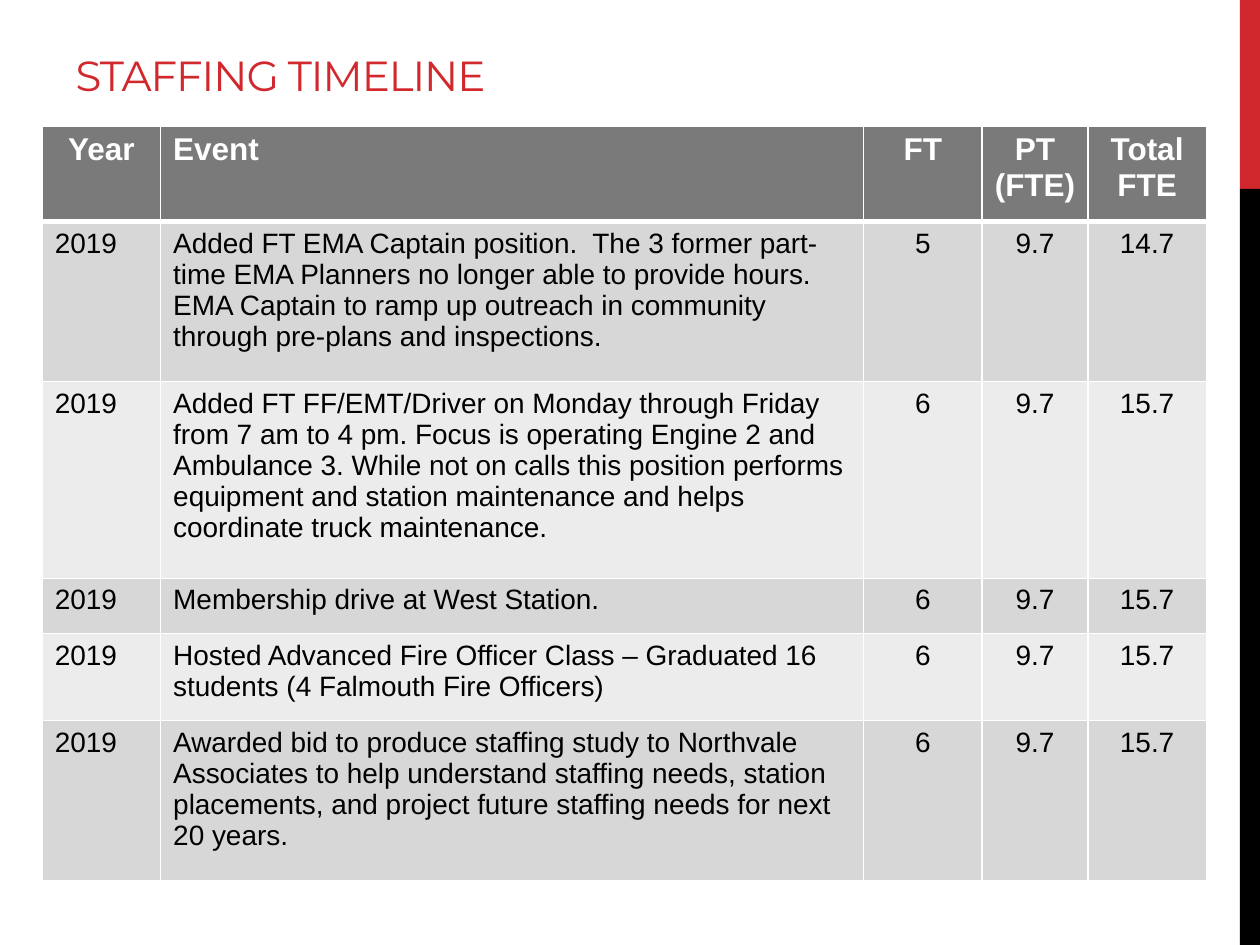
from lxml import etree
from pptx import Presentation, util as u
from pptx.dml import color
from pptx.enum import shapes, text
from pptx.oxml import ns

GRID_COLUMNS, GRID_ROWS = 100, 75
COLUMN_WIDTHS = [9.4, 55.8, 9.4, 8.4, 9.4]
ROW_HEIGHTS = [7.6, 12.7, 15.6, 4.4, 6.9, 12.7]
HEADINGS = ["Year", "Event", "FT", "PT (FTE)", "Total FTE"]
TIMELINE = [
    ["2019", "Added FT EMA Captain position.  The 3 former part-time EMA Planners "
     "no longer able to provide hours.  EMA Captain to ramp up outreach in community "
     "through pre-plans and inspections.", "5", "9.7", "14.7"],
    ["2019", "Added FT FF/EMT/Driver on Monday through Friday from 7 am to 4 pm. "
     "Focus is operating Engine 2 and Ambulance 3. While not on calls this position "
     "performs equipment and station maintenance and helps coordinate truck "
     "maintenance.", "6", "9.7", "15.7"],
    ["2019", "Membership drive at West Station.", "6", "9.7", "15.7"],
    ["2019", "Hosted Advanced Fire Officer Class – Graduated 16 students "
     "(4 Falmouth Fire Officers)", "6", "9.7", "15.7"],
    ["2019", "Awarded bid to produce staffing study to Northvale Associates to help "
     "understand staffing needs, station placements, and project future staffing "
     "needs for next 20 years.", "6", "9.7", "15.7"],
]


def rgb(value):
    return color.RGBColor.from_string(value)


class SlideBuilder:
    red, black, white = "D1282E", "000000", "FFFFFF"
    header_fill, bands = "7A7A7A", ("D7D7D7", "ECECEC")
    title_font, body_font = "Montserrat", "Arial"

    def __init__(self, deck):
        self.column = deck.slide_width / GRID_COLUMNS
        self.row = deck.slide_height / GRID_ROWS
        self.slide = deck.slides.add_slide(deck.slide_layouts[5])

    def frame(self, left, top, width, height):
        return (u.Emu(round(left * self.column)), u.Emu(round(top * self.row)),
                u.Emu(round(width * self.column)), u.Emu(round(height * self.row)))

    def style(self, paragraph, font, size, fill, bold=False):
        paragraph.font.name = font
        paragraph.font.size = u.Pt(size)
        paragraph.font.bold = bold
        paragraph.font.color.rgb = rgb(fill)

    def title(self, words, *place):
        box = self.slide.shapes.title
        box.left, box.top, box.width, box.height = self.frame(*place)
        box.text_frame.text = words
        box.text_frame.word_wrap = True
        box.text_frame.auto_size = text.MSO_AUTO_SIZE.NONE
        box.text_frame.vertical_anchor = text.MSO_ANCHOR.BOTTOM
        para = box.text_frame.paragraphs[0]
        para.alignment = text.PP_ALIGN.LEFT
        self.style(para, self.title_font, 24, self.red)
        para.runs[0].font._element.set("spc", "-60")

    def bar(self, fill, *place):
        box = self.slide.shapes.add_shape(shapes.MSO_SHAPE.RECTANGLE, *self.frame(*place))
        box.shadow.inherit = False
        box.fill.solid()
        box.fill.fore_color.rgb = rgb(fill)
        box.line.fill.background()

    def borders(self, cell, bottom):
        properties = cell._tc.get_or_add_tcPr()
        for side, points in (("L", 1), ("R", 1), ("T", 1), ("B", bottom)):
            line = etree.SubElement(properties, ns.qn(f"a:ln{side}"), w=str(u.Pt(points)))
            fill = etree.SubElement(line, ns.qn("a:solidFill"))
            etree.SubElement(fill, ns.qn("a:srgbClr"), val=self.white)

    def cell(self, cell, words, fill, header, centred):
        self.borders(cell, 3 if header else 1)
        cell.fill.solid()
        cell.fill.fore_color.rgb = rgb(fill)
        cell.text = words
        para = cell.text_frame.paragraphs[0]
        para.alignment = text.PP_ALIGN.CENTER if centred else text.PP_ALIGN.LEFT
        self.style(para, self.body_font, 18 if header else 16,
                   self.white if header else self.black, header)

    def table(self, rows, left, top):
        place = self.frame(left, top, sum(COLUMN_WIDTHS), sum(ROW_HEIGHTS))
        table = self.slide.shapes.add_table(len(rows), len(COLUMN_WIDTHS), *place).table
        for column, width in zip(table.columns, COLUMN_WIDTHS):
            column.width = u.Emu(round(width * self.column))
        for i, (row, height) in enumerate(zip(table.rows, ROW_HEIGHTS)):
            row.height = u.Emu(round(height * self.row))
            header = i == 0
            fill = self.header_fill if header else self.bands[(i - 1) % 2]
            for j, words in enumerate(rows[i]):
                centred = j > 1 or (header and j == 0)
                self.cell(table.cell(i, j), words, fill, header, centred)


def main():
    deck = Presentation()
    deck.slide_width, deck.slide_height = u.Inches(10), u.Inches(7.5)
    page = SlideBuilder(deck)
    page.bar(page.red, 98.4, 0, 1.6, 15)
    page.bar(page.black, 98.4, 15, 1.6, 60)
    page.title("STAFFING TIMELINE", 5, 1.7, 63.3, 6.7)
    page.table([HEADINGS] + TIMELINE, 3.35, 10)
    deck.save("out.pptx")


if __name__ == "__main__":
    main()
